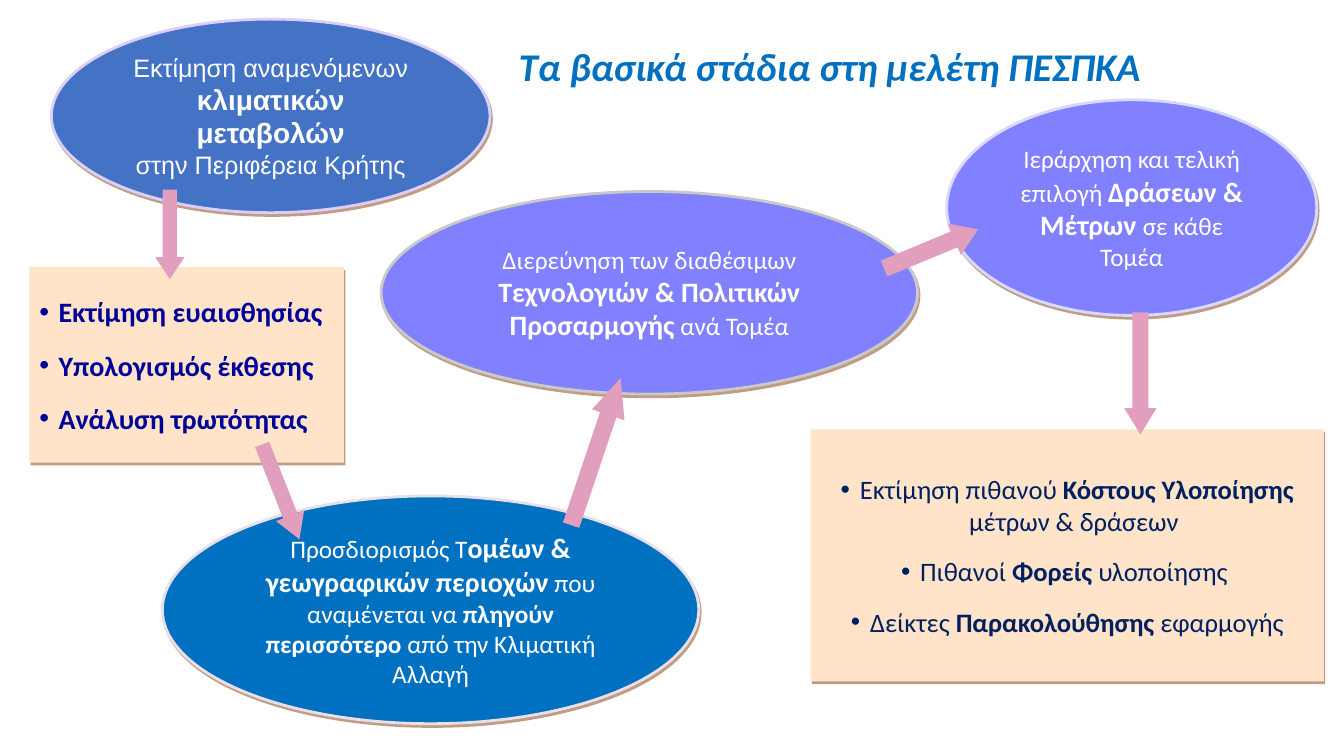
"""Build the slide on the main stages of the regional climate adaptation study."""
from lxml import etree
from pptx import Presentation
from pptx import util as u
from pptx.dml.color import RGBColor
from pptx.enum import shapes, text
from pptx.oxml import ns

WHITE = RGBColor(0xFF, 0xFF, 0xFF)
BLUE = RGBColor(0x00, 0x70, 0xC0)
STEEL = RGBColor(0x44, 0x72, 0xC4)
VIOLET = RGBColor(0x81, 0x81, 0xFF)
PEACH = RGBColor(0xFF, 0xE4, 0xC9)
PINK = RGBColor(0xE2, 0x9E, 0xBD)
NAVY = RGBColor(0x00, 0x20, 0x60)
INDIGO = RGBColor(0x00, 0x00, 0x99)
BROWN = RGBColor(0x82, 0x3B, 0x0B)
LILAC_EDGE = RGBColor(0xDB, 0xCE, 0xFA)
ROSE_EDGE = RGBColor(0xE9, 0xDF, 0xE8)
GREY_EDGE = RGBColor(0xC9, 0xC9, 0xC9)
PALE_EDGE = RGBColor(0xD9, 0xD9, 0xFF)

PLAIN, FIRM, STRONG = (18, False), (18, True), (20, True)
ITEM, ITEM_BOLD = (19, False), (19, True)
CENTER, LEFT = text.PP_ALIGN.CENTER, text.PP_ALIGN.LEFT
OVAL, DOWN, RIGHT = (shapes.MSO_SHAPE.OVAL, shapes.MSO_SHAPE.DOWN_ARROW,
                     shapes.MSO_SHAPE.RIGHT_ARROW)

deck = Presentation()
deck.slide_width, deck.slide_height = u.Inches(13.33), u.Inches(7.5)
slide = deck.slides.add_slide(deck.slide_layouts[3])


def share(left, top, width, height):
    """Turn percentages of the slide into lengths."""
    sides = (deck.slide_width, deck.slide_height) * 2
    return [int(side * part / 100) for side, part in zip(sides, (left, top, width, height))]


def write(part, paragraphs, color=WHITE, font="Calibri", align=CENTER, italic=False,
          anchor=text.MSO_ANCHOR.MIDDLE, spacing=1.0, after=0, bullet=False, shadow=True):
    """Fill a part with formatted runs and give it its shadow."""
    frame = part.text_frame
    frame.word_wrap = True
    frame.auto_size = text.MSO_AUTO_SIZE.NONE
    frame.vertical_anchor = anchor
    for index, runs in enumerate(paragraphs):
        paragraph = frame.add_paragraph() if index else frame.paragraphs[0]
        paragraph.alignment = align
        paragraph.line_spacing = spacing
        paragraph.space_before, paragraph.space_after = u.Pt(0), u.Pt(after)
        if bullet:
            props = paragraph._p.get_or_add_pPr()
            props.set("marL", str(u.Inches(0.19)))
            props.set("indent", str(-u.Inches(0.19)))
            etree.SubElement(props, ns.qn("a:buFont"), typeface="Arial")
            etree.SubElement(props, ns.qn("a:buChar"), char="•")
        for words, (size, bold) in runs:
            run = paragraph.add_run()
            run.text = words
            run.font.name, run.font.size = font, u.Pt(size)
            run.font.bold, run.font.italic = bold, italic
            run.font.color.rgb = color
    if shadow:
        part.shadow.inherit = False
        effects = part._element.spPr.find(ns.qn("a:effectLst"))
        outer = etree.SubElement(effects, ns.qn("a:outerShdw"), blurRad="0",
                                 dist=str(u.Pt(2.2)), dir=str(63 * 60000),
                                 algn="ctr", rotWithShape="0")
        tint = etree.SubElement(outer, ns.qn("a:srgbClr"), val=str(BROWN))
        etree.SubElement(tint, ns.qn("a:alpha"), val="50000")


heading, vulnerability, outcome = slide.placeholders
heading.left, heading.top, heading.width, heading.height = share(32.86, 4.67, 57.69, 7.87)
write(heading, [[("Τα βασικά στάδια στη μελέτη ΠΕΣΠΚΑ", (28, True))]], color=BLUE,
      italic=True, anchor=text.MSO_ANCHOR.BOTTOM, spacing=0.9, shadow=False)

lists = [
    (vulnerability, (2.18, 35.33, 23.41, 25.87), INDIGO, LEFT, 14, [
        [("Εκτίμηση ευαισθησίας", STRONG)],
        [("Υπολογισμός έκθεσης", STRONG)],
        [("Ανάλυση τρωτότητας", STRONG)]]),
    (outcome, (60.32, 56.8, 38.18, 33.33), NAVY, CENTER, 13, [
        [("Εκτίμηση πιθανού ", ITEM), ("Κόστους Υλοποίησης", ITEM_BOLD),
         (" μέτρων & δράσεων ", ITEM)],
        [("Πιθανοί ", ITEM), ("Φορείς", ITEM_BOLD), (" υλοποίησης ", ITEM)],
        [("Δείκτες ", ITEM), ("Παρακολούθησης ", ITEM_BOLD), ("εφαρμογής", ITEM)]]),
]
for panel, place, color, align, after, items in lists:
    panel.left, panel.top, panel.width, panel.height = share(*place)
    panel.fill.solid()
    panel.fill.fore_color.rgb = PEACH
    write(panel, items, color=color, align=align, after=after, bullet=True)

stages = [
    ((3.83, 2.53, 32.63, 25.6), STEEL, LILAC_EDGE, "Arial", [
        [("Εκτίμηση αναμενόμενων ", PLAIN), ("κλιματικών μεταβολών", STRONG)],
        [("στην Περιφέρεια Κρήτης", PLAIN)]]),
    ((12.08, 65.6, 39.91, 30.13), BLUE, ROSE_EDGE, "Calibri", [
        [("Προσδιορισμός Τ", PLAIN), ("ομέων & γεωγραφικών περιοχών", STRONG),
         (" που αναμένεται να ", PLAIN), ("πληγούν περισσότερο", FIRM),
         (" από την Κλιματική Αλλαγή", PLAIN)]]),
    ((28.36, 25.33, 39.91, 26.8), VIOLET, GREY_EDGE, "Calibri", [
        [("Διερεύνηση των διαθέσιμων ", PLAIN), ("Τεχνολογιών & Πολιτικών", STRONG)],
        [("Προσαρμογής", STRONG), (" ανά Τομέα", PLAIN)]]),
    ((70.44, 13.2, 27.53, 28.53), VIOLET, PALE_EDGE, "Calibri", [
        [("Ιεράρχηση και τελική επιλογή ", PLAIN), ("Δράσεων &", STRONG), (" ", PLAIN),
         ("Μέτρων ", STRONG), ("σε κάθε Τομέα", PLAIN)]]),
]
for place, fill, edge, font, paragraphs in stages:
    stage = slide.shapes.add_shape(OVAL, *share(*place))
    stage.fill.solid()
    stage.fill.fore_color.rgb = fill
    stage.line.color.rgb = edge
    stage.line.width = u.Pt(2)
    write(stage, paragraphs, font=font)

steps = [
    (DOWN, (11.55, 25.07, 2.18, 11.87), 0, 0.76),
    (RIGHT, (17.1, 63.07, 7.58, 4), 68.5, 0.84),
    (RIGHT, (38.56, 57.47, 11.55, 4.53), 288.6, 1.13),
    (DOWN, (83.65, 41.33, 2.4, 16.13), 0, 0.81),
    (RIGHT, (65.49, 30.67, 7.58, 4.53), 337.4, 0.75),
]
for kind, place, turn, head in steps:
    step = slide.shapes.add_shape(kind, *share(*place))
    step.rotation = turn
    step.adjustments[0], step.adjustments[1] = 0.5, head
    step.fill.solid()
    step.fill.fore_color.rgb = PINK
    step.line.fill.background()
    step.shadow.inherit = False

deck.save("out.pptx")
